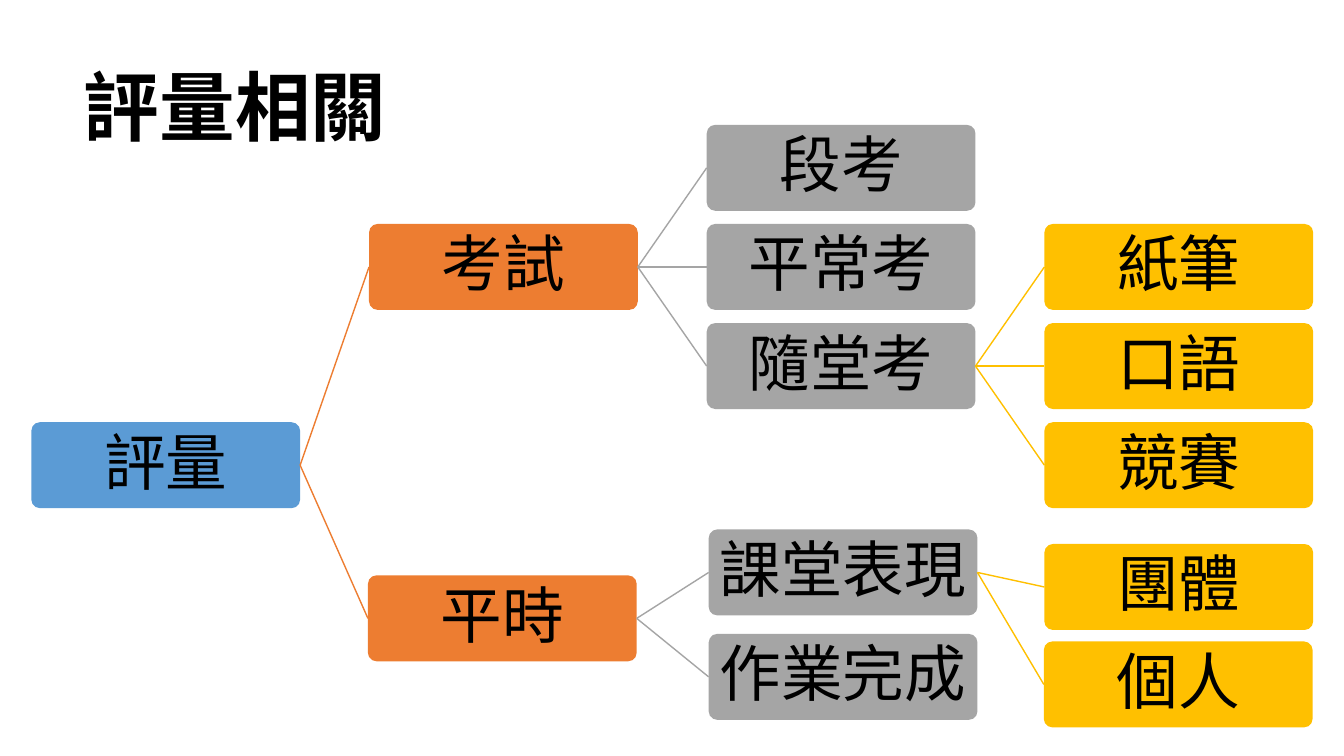
from collections import namedtuple

from lxml import etree
from pptx import Presentation
from pptx.dml.color import RGBColor
from pptx.enum.shapes import MSO_CONNECTOR as Connector, MSO_SHAPE as Shape
from pptx.enum.text import MSO_ANCHOR as Anchor, PP_ALIGN as Align
from pptx.oxml.ns import qn
from pptx.util import Pt

COLORS = {
    "text": "000000",
    "root": "5B9BD5",
    "category": "ED7D31",
    "kind": "A5A5A5",
    "form": "FFC000",
}
LEVELS = ["root", "category", "kind", "form"]
CJK_FONT = "Noto Sans CJK SC"
TITLE_FORMAT = {"name": "Calibri", "size": Pt(54), "bold": True}
TOPIC_FORMAT = {"name": CJK_FONT, "size": Pt(44), "bold": False}

Box = namedtuple("Box", "left top width height")
# nudge: offset from the left edge of the topic's column
Topic = namedtuple("Topic", "label top nudge children", defaults=[0, ()])

TITLE_BOX = Box(52.8, 27.4, 828, 104.4)
TREE_BOX = Box(22.4, 89.2, 915.6, 430)
TOPIC_WIDTH, TOPIC_HEIGHT = 192, 61.4
COLUMN_STEP = (TREE_BOX.width - TOPIC_WIDTH) / (len(LEVELS) - 1)
ROW_STEP = 70.8

# tops are measured from the top of the tree
ASSESSMENT = Topic("評量", 3 * ROW_STEP, 0, [
    Topic("考試", ROW_STEP, 0, [
        Topic("段考", 0),
        Topic("平常考", ROW_STEP),
        Topic("隨堂考", 2 * ROW_STEP, 0, [
            Topic("紙筆", ROW_STEP),
            Topic("口語", 2 * ROW_STEP),
            Topic("競賽", 3 * ROW_STEP),
        ]),
    ]),
    Topic("平時", 321.8, -0.8, [
        Topic("課堂表現", 289, 1.4, [
            Topic("團體", 299.4),
            Topic("個人", 369, -0.4),
        ]),
        Topic("作業完成", 363.6, 1.4),
    ]),
])


def rgb(name):
    return RGBColor.from_string(COLORS[name])


def write(frame, text, text_format, align, margins):
    frame.word_wrap = True
    frame.vertical_anchor = Anchor.MIDDLE
    for side, margin in margins.items():
        setattr(frame, f"margin_{side}", Pt(margin))
    paragraph = frame.paragraphs[0]
    paragraph.alignment = align
    paragraph.line_spacing = 0.9
    run = paragraph.add_run()
    run.text = text
    for attribute, value in text_format.items():
        setattr(run.font, attribute, value)
    run.font.color.rgb = rgb("text")
    east_asian = etree.SubElement(run.font._element, qn("a:ea"))
    east_asian.set("typeface", CJK_FONT)


def draw_title(slide, text, box):
    title = slide.shapes.add_textbox(*map(Pt, box))
    margins = {"left": 7.2, "right": 7.2, "top": 3.6, "bottom": 3.6}
    write(title.text_frame, text, TITLE_FORMAT, Align.LEFT, margins)


def draw_link(slide, start, end, color):
    link = slide.shapes.add_connector(Connector.STRAIGHT, *map(Pt, start + end))
    link.line.color.rgb = rgb(color)
    link.line.width = Pt(1)
    etree.SubElement(link._element.spPr, qn("a:effectLst"))


def draw_topic(slide, label, color, box):
    topic = slide.shapes.add_shape(Shape.ROUNDED_RECTANGLE, *map(Pt, box))
    topic.adjustments[0] = 0.1
    topic.shadow.inherit = False
    topic.fill.solid()
    topic.fill.fore_color.rgb = rgb(color)
    topic.line.fill.background()
    margins = dict.fromkeys(["left", "right", "top", "bottom"], 2)
    write(topic.text_frame, label, TOPIC_FORMAT, Align.CENTER, margins)


def draw_branch(slide, topic, tree_box, level=0, parent_end=None):
    """Draw a topic, its link to the parent and everything below it."""
    color = LEVELS[level]
    left = tree_box.left + level * COLUMN_STEP + topic.nudge
    top = tree_box.top + topic.top
    middle = top + TOPIC_HEIGHT / 2
    if parent_end:
        draw_link(slide, parent_end, (left, middle), color)
    draw_topic(slide, topic.label, color, Box(left, top, TOPIC_WIDTH, TOPIC_HEIGHT))
    for child in topic.children:
        draw_branch(slide, child, tree_box, level + 1, (left + TOPIC_WIDTH, middle))


def main():
    deck = Presentation()
    deck.slide_width, deck.slide_height = Pt(960), Pt(540)
    slide = deck.slides.add_slide(deck.slide_layouts[6])
    draw_title(slide, "評量相關", TITLE_BOX)
    draw_branch(slide, ASSESSMENT, TREE_BOX)
    deck.save("out.pptx")


if __name__ == "__main__":
    main()
